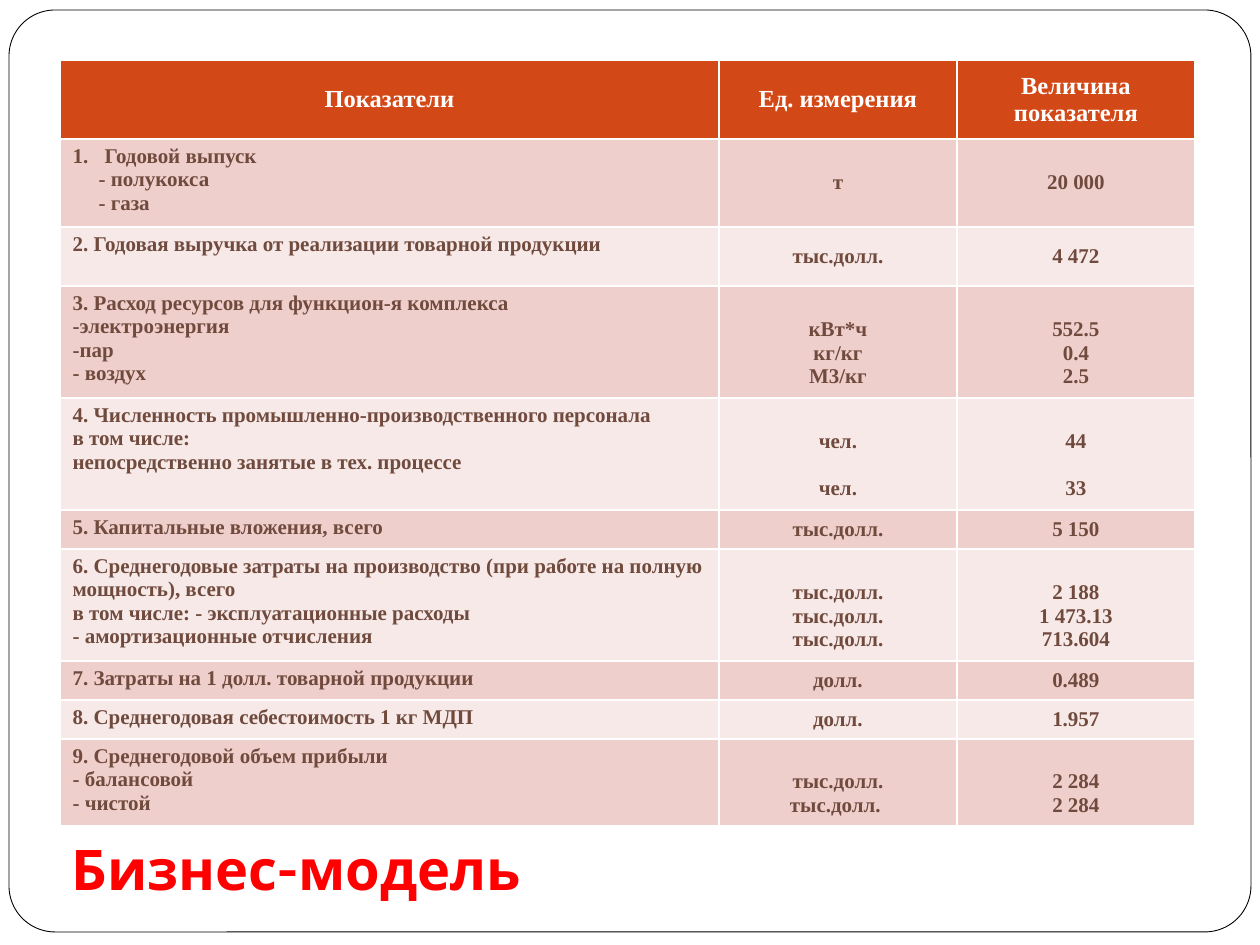
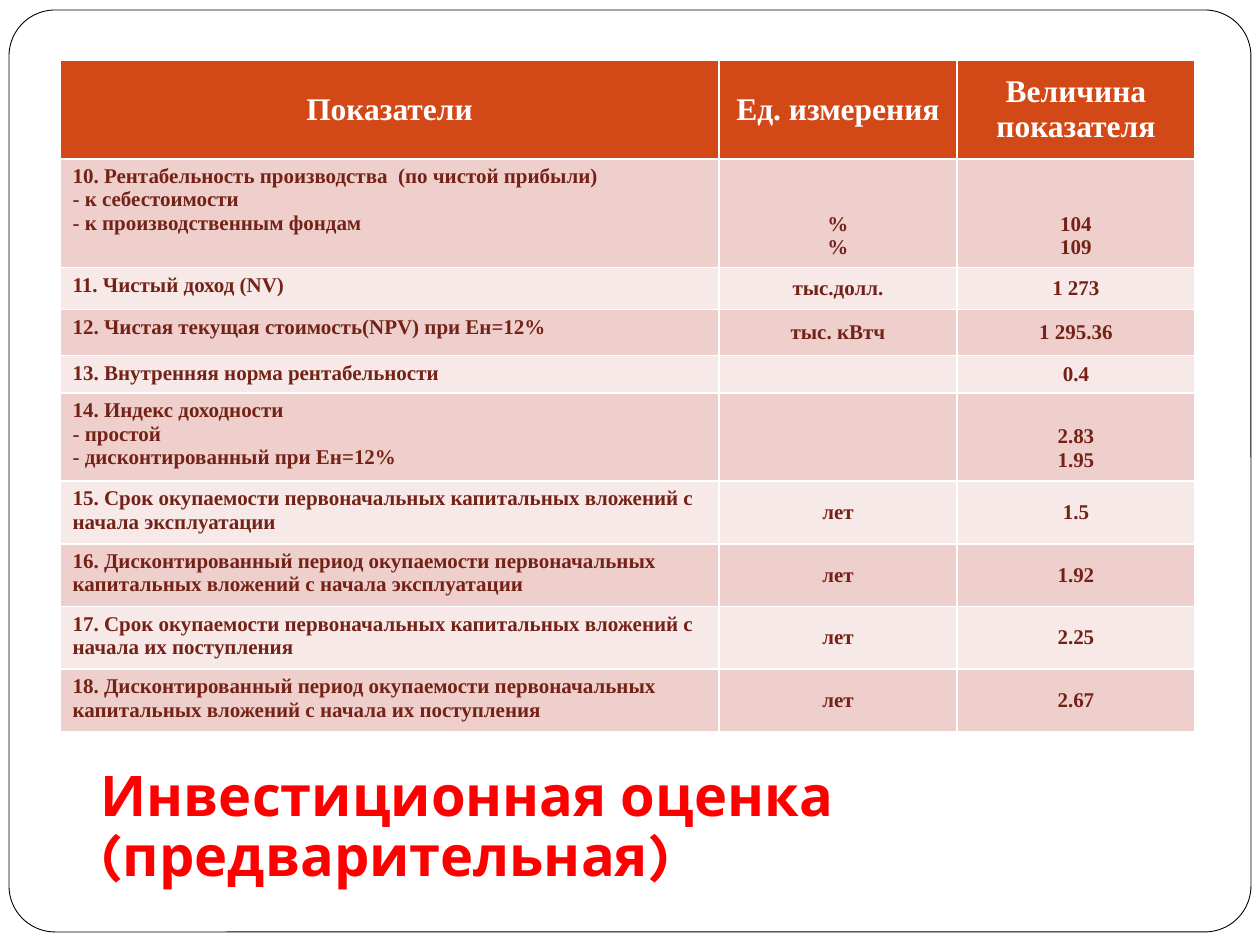
from lxml.etree import SubElement
from pptx import Presentation
from pptx.dml.color import RGBColor as Rgb
from pptx.enum.shapes import MSO_SHAPE as Shape
from pptx.enum.text import MSO_ANCHOR as Anchor, PP_ALIGN as Align
from pptx.oxml.ns import qn
from pptx.util import Pt

HUES = {
    "white": "FFFFFF", "black": "000000", "red": "FF0000", "head": "D34817",
    "odd": "EFCFCC", "even": "F7E9E8", "brown": "704A3D", "wine": "742217",
}
SCALE = 914400 / 126
LINE = 23
COLS = [659, 238, 238]
HEAD = ["Показатели", "Ед. измерения", "Величина показателя"]

MODEL = [
    (88, "Годовой выпуск\n- полукокса\n- газа", "т", "20 000"),
    (59, "2. Годовая выручка от реализации товарной продукции", "тыс.долл.", "4 472"),
    (112, "3. Расход ресурсов для функцион-я комплекса\n-электроэнергия\n-пар\n- воздух",
     "\nкВт*ч\nкг/кг\nМ3/кг", "\n552.5\n0.4\n2.5"),
    (112, "4. Численность промышленно-производственного персонала\nв том числе:\n"
     "непосредственно занятые в тех. процессе", "\nчел.\n\nчел.", "\n44\n\n33"),
    (39, "5. Капитальные вложения, всего", "тыс.долл.", "5 150"),
    (112, "6. Среднегодовые затраты на производство (при работе на полную мощность), всего\n"
     "в том числе: - эксплуатационные расходы\n- амортизационные отчисления",
     "\nтыс.долл.\nтыс.долл.\nтыс.долл.", "\n2 188\n1 473.13\n713.604"),
    (39, "7. Затраты на 1 долл. товарной продукции", "долл.", "0.489"),
    (39, "8. Среднегодовая себестоимость 1 кг МДП", "долл.", "1.957"),
    (87, "9. Среднегодовой объем прибыли\n- балансовой\n- чистой",
     "\nтыс.долл.\nтыс.долл. ", "\n2 284\n2 284"),
]
RATING = [
    (106, "10. Рентабельность производства  (по чистой прибыли)\n- к себестоимости\n"
     "- к производственным фондам", "\n\n%\n%", "\n\n104\n109"),
    (42, "11. Чистый доход (NV)", "тыс.долл.", "1 273"),
    (46, "12. Чистая текущая стоимость(NPV) при Ен=12%", "тыс. кВтч", "1 295.36"),
    (37, "13. Внутренняя норма рентабельности", "", "0.4"),
    (82, "14. Индекс доходности\n- простой\n- дисконтированный при Ен=12%", "", "\n2.83\n1.95"),
    (59, "15. Срок окупаемости первоначальных капитальных вложений с начала эксплуатации",
     "лет", "1.5"),
    (59, "16. Дисконтированный период окупаемости первоначальных капитальных вложений "
     "с начала эксплуатации", "лет", "1.92"),
    (60, "17. Срок окупаемости первоначальных капитальных вложений с начала их поступления",
     "лет", "2.25"),
    (59, "18. Дисконтированный период окупаемости первоначальных капитальных вложений "
     "с начала их поступления", "лет", "2.67"),
]


def px(*sizes):
    """Turn px lengths into EMU."""
    return [round(size * SCALE) for size in sizes]


class Deck:
    """Holds the shared style and the current slide."""

    def __init__(self):
        """Start an empty deck of the right size."""
        self.prs = Presentation()
        self.prs.slide_width, self.prs.slide_height = px(1260, 945)

    def page(self):
        """Add a blank slide with the rounded frame."""
        self.slide = self.prs.slides.add_slide(self.prs.slide_layouts[6])
        frame = self.slide.shapes.add_shape(Shape.ROUNDED_RECTANGLE, *px(9, 10, 1242, 922))
        frame.adjustments[0] = 0.05
        frame.shadow.inherit = False
        self.paint(frame.fill, "white")
        self.paint(frame.line.fill, "black")
        frame.line.width = Pt(0.5)

    def paint(self, fill, hue):
        """Give a fill one solid colour."""
        fill.solid()
        fill.fore_color.rgb = Rgb.from_string(HUES[hue])

    def style(self, para, face, size, hue):
        """Set the bold font of a paragraph."""
        font = para.font
        font.name, font.size, font.bold = face, Pt(size), True
        font.color.rgb = Rgb.from_string(HUES[hue])

    def title(self, text, box, foot=6, pitch=1.0):
        """Add the red title at the bottom of the slide."""
        frame = self.slide.shapes.add_textbox(*px(*box)).text_frame
        frame.word_wrap = True
        frame.vertical_anchor = Anchor.BOTTOM
        frame.margin_bottom, = px(foot)
        frame.text = text
        for para in frame.paragraphs:
            para.line_spacing = pitch
            self.style(para, "Karla", 32, "red")

    def cell(self, cell, text, size, hue, back, mid):
        """Fill one cell, turning empty lines into gaps."""
        self.paint(cell.fill, back)
        cell.vertical_anchor = Anchor.MIDDLE if mid else Anchor.TOP
        body = text.lstrip("\n")
        cell.margin_top, = px(6 + LINE * (len(text) - len(body)))
        frame = cell.text_frame
        for num, part in enumerate(body.split("\n\n")):
            for step, line in enumerate(part.split("\n")):
                para = frame.add_paragraph() if num or step else frame.paragraphs[0]
                para.text = line
                para.alignment = Align.CENTER if mid else Align.LEFT
                if num and not step:
                    para.space_before = Pt(13.3)
                self.style(para, "Times New Roman", size, hue)

    def table(self, rows, high, size, hue):
        """Add the table of indicators with its header row."""
        tall = [high] + [row[0] for row in rows]
        box = px(60, 60, sum(COLS), sum(tall))
        grid = self.slide.shapes.add_table(len(tall), len(COLS), *box).table
        for col, wide in zip(grid.columns, px(*COLS)):
            col.width = wide
        for row, rise in zip(grid.rows, px(*tall)):
            row.height = rise
        for col, text in enumerate(HEAD):
            self.cell(grid.cell(0, col), text, size, "white", "head", True)
        for num, (_, *texts) in enumerate(rows, 1):
            back = "odd" if num % 2 else "even"
            for col, text in enumerate(texts):
                self.cell(grid.cell(num, col), text, 12, hue, back, col > 0)
        return grid

    def number(self, cell):
        """Number the first line of a cell and indent the rest."""
        for num, para in enumerate(cell.text_frame.paragraphs):
            props = para._p.get_or_add_pPr()
            left, = px(26 if num else 32)
            props.set("marL", str(left))
            if num == 0:
                props.set("indent", str(-left))
                mark = SubElement(props, qn("a:buAutoNum"), type="arabicPeriod")
                props.find(qn("a:defRPr")).addprevious(mark)


def main():
    """Build both slides and save them."""
    deck = Deck()
    deck.page()
    grid = deck.table(MODEL, 79, 14, "brown")
    deck.number(grid.cell(1, 0))
    deck.title("Бизнес-модель", (59, 827, 1128, 81))

    deck.page()
    deck.title("Инвестиционная оценка\n(предварительная)", (88, 777, 1127, 125), 13, 0.9)
    deck.table(RATING, 99, 18, "wine")
    deck.prs.save("out.pptx")


if __name__ == "__main__":
    main()
